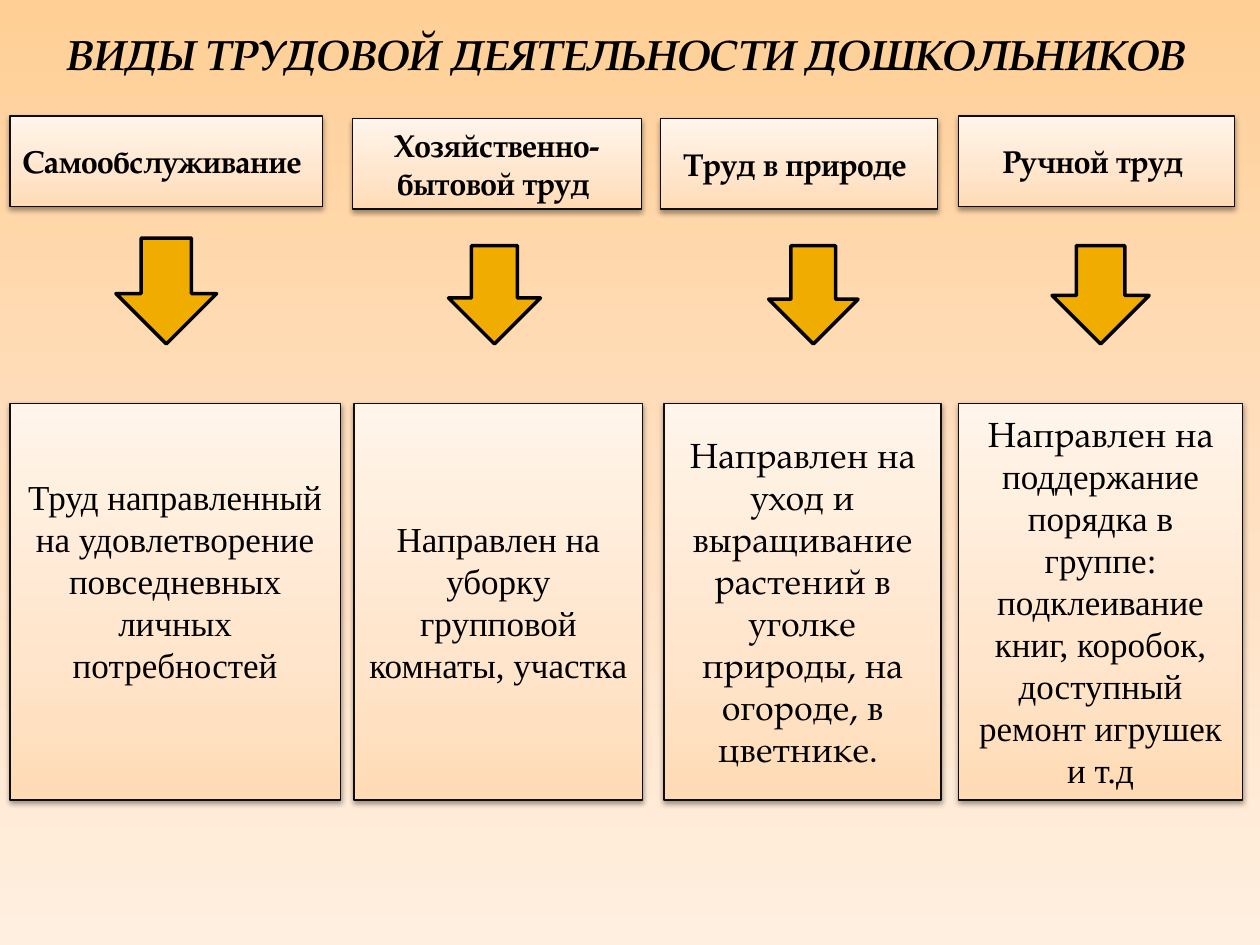
"""Build the slide on kinds of work for preschool children."""
from lxml.etree import SubElement as Sub
from pptx import Presentation
from pptx.dml.color import RGBColor as RGB
from pptx.enum.shapes import MSO_SHAPE as Shape
from pptx.enum.text import MSO_ANCHOR as Anchor, MSO_AUTO_SIZE as Auto, PP_ALIGN as Align
from pptx.oxml.ns import qn
from pptx.util import Inches, Pt

SERIF, TIMES = "TeX Gyre Pagella", "Times New Roman"
COLORS = {"text": "000000", "edge": "0D0D0D", "arrow": "F0AD00"}
PAGE = [(0, "FFCF96"), (50, "FFDFBF"), (100, "FFEFE0")]
CARD = [(0, "FFDBB5"), (35, "FFE5CB"), (100, "FFF5EB")]
TITLE = "ВИДЫ ТРУДОВОЙ ДЕЯТЕЛЬНОСТИ ДОШКОЛЬНИКОВ"
HEAD = {"name": SERIF, "size": Pt(18), "bold": True}
BODY = {"size": Pt(20)}
HEAD_H, BODY_TOP, BODY_H, TIP = 0.72, 3.2, 3.15, 2.73

COLUMNS = [
    {"head": "Самообслуживание", "align": Align.LEFT, "box": (0.08, 0.92, 2.48),
     "arrow": (0.92, 0.8, 0.84), "card": (0.08, 2.62), "pad": 0.38,
     "body": [("Труд направленный на удовлетворение повседневных личных потребностей", TIMES)]},
    {"head": "Хозяйственно-бытовой труд ", "box": (2.8, 0.94, 2.29),
     "arrow": (3.56, 0.73, 0.78), "card": (2.81, 2.29),
     "body": [("Направлен на уборку групповой комнаты, участка", TIMES)]},
    {"head": "Труд в природе ", "box": (5.24, 0.94, 2.2),
     "arrow": (6.1, 0.71, 0.78), "card": (5.27, 2.2),
     "body": [("Направлен на уход и выращивание растений в уголке природы, "
               "на огороде, в цветнике. ", SERIF)]},
    {"head": "Ручной труд ", "box": (7.61, 0.92, 2.19),
     "arrow": (8.35, 0.77, 0.78), "card": (7.61, 2.25),
     "body": [("Направлен на ", SERIF),
              ("поддержание порядка в группе: подклеивание книг, коробок, "
               "доступный ремонт игрушек и т.д", TIMES)]},
]


def style(item, look):
    for key, value in look.items():
        setattr(item, key, value)


def blend(fill, root, stops, angle):
    fill.gradient()
    fill.gradient_angle = angle
    group = next(root.iter(qn("a:gsLst")))
    for old in list(group):
        group.remove(old)
    for place, color in stops:
        stop = Sub(group, qn("a:gs"), pos=str(place * 1000))
        Sub(stop, qn("a:srgbClr"), val=color)


def write(para, text, look):
    run = para.add_run()
    run.text = text
    style(run.font, look)
    run.font.color.rgb = RGB.from_string(COLORS["text"])


def draw(slide, kind, place, edge, width):
    shape = slide.shapes.add_shape(kind, *map(Inches, place))
    shape.shadow.inherit = False
    shape.line.color.rgb = RGB.from_string(COLORS[edge])
    shape.line.width = Pt(width)
    return shape


def panel(slide, place, runs, align=Align.CENTER, pad=0.05):
    shape = draw(slide, Shape.RECTANGLE, place, "edge", 0.75)
    root = shape._element.spPr
    blend(shape.fill, root, CARD, 90)
    glow = Sub(root.find(qn("a:effectLst")), qn("a:outerShdw"), blurRad="40000",
               dist="20000", dir="5400000", rotWithShape="0")
    Sub(Sub(glow, qn("a:srgbClr"), val=COLORS["text"]), qn("a:alpha"), val="38000")
    frame = shape.text_frame
    style(frame, {"word_wrap": True, "vertical_anchor": Anchor.MIDDLE,
                  "margin_bottom": Inches(pad)})
    para = frame.paragraphs[0]
    para.alignment = align
    for text, look in runs:
        write(para, text, look)


def main():
    deck = Presentation()
    style(deck, {"slide_width": Inches(10), "slide_height": Inches(7.5)})
    slide = deck.slides.add_slide(deck.slide_layouts[5])
    blend(slide.background.fill, slide._element, PAGE, 270)

    title = slide.shapes.title
    style(title, {"left": Inches(0.43), "top": Inches(0.18),
                  "width": Inches(9.31), "height": Inches(0.5)})
    style(title.text_frame, {"word_wrap": False, "vertical_anchor": Anchor.TOP,
                             "auto_size": Auto.SHAPE_TO_FIT_TEXT})
    para = title.text_frame.paragraphs[0]
    para.alignment = Align.LEFT
    write(para, TITLE, {"name": SERIF, "size": Pt(24), "bold": True, "italic": True})

    for col in COLUMNS:
        panel(slide, (*col["box"], HEAD_H), [(col["head"], HEAD)],
              col.get("align", Align.CENTER))
        left, wide, high = col["arrow"]
        arrow = draw(slide, Shape.DOWN_ARROW, (left, TIP - high, wide, high), "text", 2)
        arrow.fill.solid()
        arrow.fill.fore_color.rgb = RGB.from_string(COLORS["arrow"])
        left, wide = col["card"]
        runs = [(text, {**BODY, "name": font}) for text, font in col["body"]]
        panel(slide, (left, BODY_TOP, wide, BODY_H), runs, pad=col.get("pad", 0.05))
    deck.save("out.pptx")


if __name__ == "__main__":
    main()
